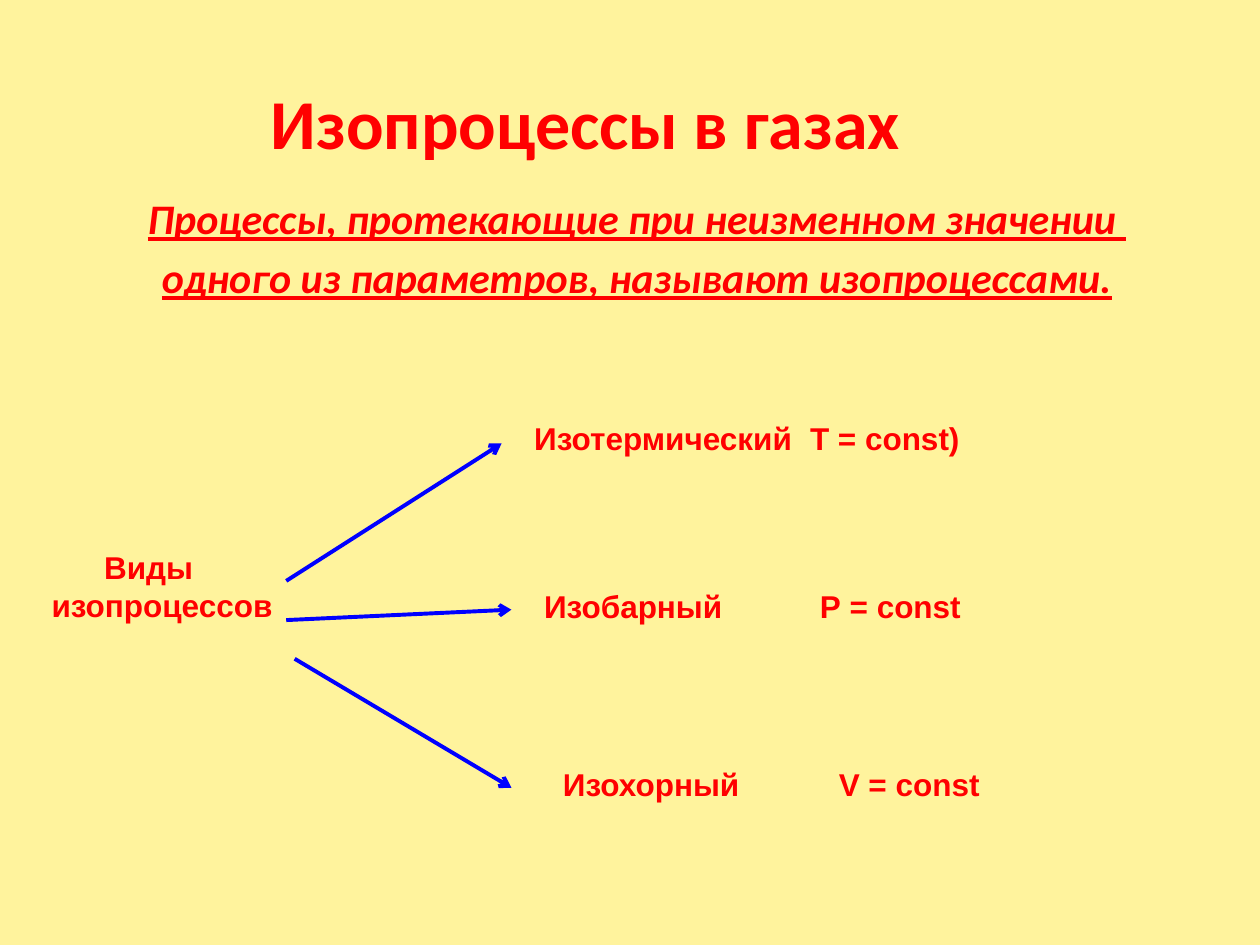
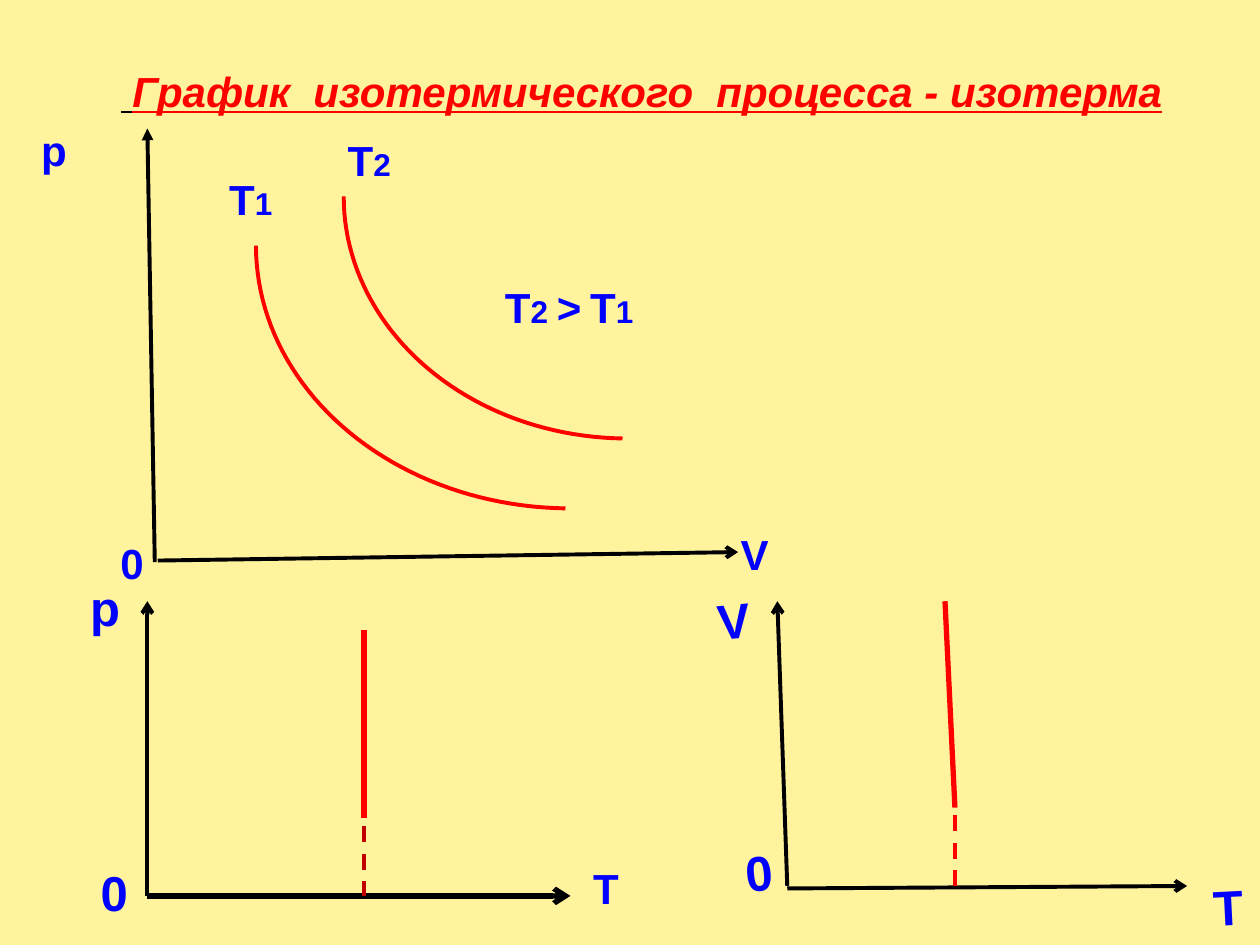
from math import cos, radians, sin

from lxml.etree import SubElement
from pptx import Presentation
from pptx.dml.color import RGBColor
from pptx.enum.dml import MSO_LINE
from pptx.enum.shapes import MSO_CONNECTOR
from pptx.enum.text import MSO_ANCHOR, MSO_AUTO_SIZE, PP_ALIGN
from pptx.oxml.ns import qn
from pptx.util import Cm, Pt

PAPER, RED, DARK_RED, BLUE, BLACK = "FFF39D", "FF0000", "C00000", "0000FF", "000000"
CURVE_STEPS = 45


def rgb(code):
    """Turn a hex string into a colour."""
    return RGBColor.from_string(code)


def style_span(span, size, color, font="Arial", bold=True, italic=False, underline=False):
    """Format one run of text."""
    span.font.name, span.font.size = font, Pt(size)
    span.font.bold, span.font.italic, span.font.underline = bold, italic, underline
    span.font.color.rgb = rgb(color)


def set_title(page, box, anchor, align):
    """Place the title placeholder and return its paragraph."""
    title = page.shapes.title
    title.left, title.top, title.width, title.height = map(Cm, box)
    frame = title.text_frame
    frame.auto_size, frame.word_wrap = MSO_AUTO_SIZE.NONE, True
    frame.vertical_anchor = anchor
    frame.paragraphs[0].alignment = align
    return frame.paragraphs[0]


class Region:
    """A part of a page whose contents are placed from its left top corner."""

    def __init__(self, page, left, top):
        """Remember the page and the corner, in centimetres."""
        self.shapes, self.left, self.top = page.shapes, left, top

    def point(self, x, y):
        """Return the page position of a point in the region."""
        return Cm(self.left + x), Cm(self.top + y)

    def text(self, spans, x, y, width, height, color, wrap=True, turn=0):
        """Add one paragraph made of (text, size) spans and return it."""
        box = self.shapes.add_textbox(*self.point(x, y), Cm(width), Cm(height))
        box.rotation = turn
        box.text_frame.word_wrap = wrap
        para = box.text_frame.paragraphs[0]
        for text, size in spans:
            span = para.add_run()
            span.text = text
            style_span(span, size, color)
        return para

    def line(self, start, end, color, width=2.25, head=None, dashed=False):
        """Add a straight line, with an arrowhead at its end if named."""
        line = self.shapes.add_connector(
            MSO_CONNECTOR.STRAIGHT, *self.point(*start), *self.point(*end))
        line.line.color.rgb, line.line.width = rgb(color), Pt(width)
        if dashed:
            line.line.dash_style = MSO_LINE.DASH
        if head:
            SubElement(line.line._get_or_add_ln(), qn("a:tailEnd"), type=head)
        SubElement(line._element.spPr, qn("a:effectLst"))

    def axes(self, vertical, horizontal, width=2.25, head="arrow"):
        """Add both axes, each given as its start and end."""
        self.line(*vertical, BLACK, head=head)
        self.line(*horizontal, BLACK, width, "arrow")

    def labels(self, rows, size, turn=0):
        """Add blue one-letter labels from (text, x, y, width) rows."""
        for text, x, y, width in rows:
            self.text([(text, size)], x, y, width, size * 0.052, BLUE, False, turn)

    def isotherm(self, x, y, width, height):
        """Add a quarter of an ellipse that falls from its left top end."""
        angles = [radians(180 - 89 * step / CURVE_STEPS) for step in range(CURVE_STEPS + 1)]
        points = [self.point(x + width * (1 + cos(angle)), y + height * sin(angle))
                  for angle in angles]
        builder = self.shapes.build_freeform(*points[0], scale=1.0)
        builder.add_line_segments(points[1:], close=False)
        curve = builder.convert_to_shape()
        curve.shadow.inherit = False
        curve.fill.background()
        curve.line.color.rgb, curve.line.width = rgb(RED), Pt(2.25)


def add_definition(page, left, top, width, height):
    """Add the two underlined lines of the definition."""
    box = page.shapes.add_textbox(Cm(left), Cm(top), Cm(width), Cm(height))
    frame = box.text_frame
    frame.word_wrap = True
    frame.text = ("Процессы, протекающие при неизменном значении \n"
                  "одного из параметров, называют изопроцессами.")
    for para in frame.paragraphs:
        para.alignment, para.space_before = PP_ALIGN.CENTER, Pt(4.8)
        style_span(para.runs[0], 24, RED, "Calibri", italic=True, underline=True)


def add_kinds(page, left, top):
    """Add the scheme of the three kinds of process."""
    scheme = Region(page, left, top)
    root = scheme.text([("Виды изопроцессов", 18)], 0, 2.59, 6.76, 1.8, RED)
    root._p.get_or_add_pPr().set("indent", str(Cm(1.06)))
    kinds = [
        ("Изотермический", "T = const)", 9.73, 0, (4.98, 3.38), (9.32, 0.61)),
        ("Изобарный", "Р = const", 9.93, 3.38, (4.98, 4.17), (9.52, 3.96)),
        ("Изохорный", "V = const", 10.31, 6.96, (5.15, 4.95), (9.52, 7.55)),
    ]
    for name, law, x, y, start, end in kinds:
        scheme.line(start, end, BLUE, head="arrow")
        scheme.text([(name, 18)], x, y, 5.77, 1.02, RED)
        scheme.text([(law, 18)], x + 5.56, y, 4.57, 1.02, RED)


def add_pressure_volume(page, left, top):
    """Add the graph of pressure against volume with two isotherms."""
    graph = Region(page, left, top)
    graph.axes([(0.15, 8.74), (0, 0)], [(0.21, 8.71), (11.91, 8.54)], head="triangle")
    graph.labels([("р", -2.39, -0.2, 1.04), ("0", -0.79, 8.13, 0.99),
                  ("V", 11.71, 7.93, 1.09)], 24)
    graph.isotherm(2.19, 2.36, 6.35, 5.3)
    graph.isotherm(3.96, 1.37, 5.72, 4.88)
    first, second = [("Т", 24), ("1", 18)], [("Т", 24), ("2", 18)]
    graph.text(second, 3.79, 0, 1.4, 1.27, BLUE)
    graph.text(first, 1.4, 0.79, 1.4, 1.27, BLUE)
    compared = [("Т", 24), ("2 ", 18), (">", 24), (" ", 18), *first]
    graph.text(compared, 6.96, 2.97, 3.1, 1.27, BLUE, False)


def add_pressure_temperature(page, left, top):
    """Add the graph of pressure against temperature."""
    graph = Region(page, left, top)
    graph.axes([(0, 5.94), (0, 0)], [(0, 5.94), (8.53, 5.94)], 3)
    graph.labels([("р", -1.4, -0.61, 1.12), ("0", -1.19, 5.15, 1.07)], 28)
    graph.labels([("Т", 8.74, 5.15, 1.04)], 24)
    graph.line((4.37, 0.58), (4.37, 4.36), RED, 3)
    graph.line((4.37, 4.54), (4.37, 5.94), DARK_RED, dashed=True)


def add_volume_temperature(page, left, top):
    """Add the graph of volume against temperature."""
    graph = Region(page, left, top)
    graph.axes([(0.2, 5.74), (0, 0)], [(0.2, 5.79), (8.26, 5.74)])
    graph.labels([("0", -0.89, 4.72, 1.17), (" V", -1.73, -0.33, 1.45)], 28, -5.5)
    graph.labels([("Т", 8.54, 5.43, 1.12)], 28, -2.9)
    graph.line((3.58, 4.16), (3.38, 0), RED, 3)
    graph.line((3.58, 5.74), (3.58, 4.16), RED, dashed=True)


def build_overview(page):
    """Fill the slide that defines isoprocesses."""
    para = set_title(page, (3.76, 1.4, 16.08, 2.11), MSO_ANCHOR.MIDDLE, PP_ALIGN.CENTER)
    para.text = "Изопроцессы в газах"
    style_span(para.runs[0], 40, RED, "Calibri")
    add_definition(page, 0.99, 3.76, 23.7, 4.45)
    add_kinds(page, 0.79, 8.33)


def build_graphs(page):
    """Fill the slide with the graphs of the isothermal process."""
    para = set_title(page, (2.18, 1.19, 22.63, 1.27), MSO_ANCHOR.TOP, PP_ALIGN.LEFT)
    para.text = " "
    style_span(para.runs[0], 24, BLACK, bold=False, italic=True, underline=True)
    span = para.add_run()
    span.text = "График  изотермического  процесса - изотерма"
    style_span(span, 24, RED, italic=True, underline=True)
    add_pressure_volume(page, 2.97, 2.59)
    add_pressure_temperature(page, 2.97, 12.12)
    add_volume_temperature(page, 15.67, 12.12)


def main():
    """Build the deck and save it."""
    deck = Presentation()
    deck.slide_width, deck.slide_height = Cm(25.4), Cm(19.05)
    background = deck.slide_master.background.fill
    background.solid()
    background.fore_color.rgb = rgb(PAPER)
    title_only = deck.slide_layouts.get_by_name("Title Only")
    for build in (build_overview, build_graphs):
        build(deck.slides.add_slide(title_only))
    deck.save("out.pptx")


if __name__ == "__main__":
    main()
